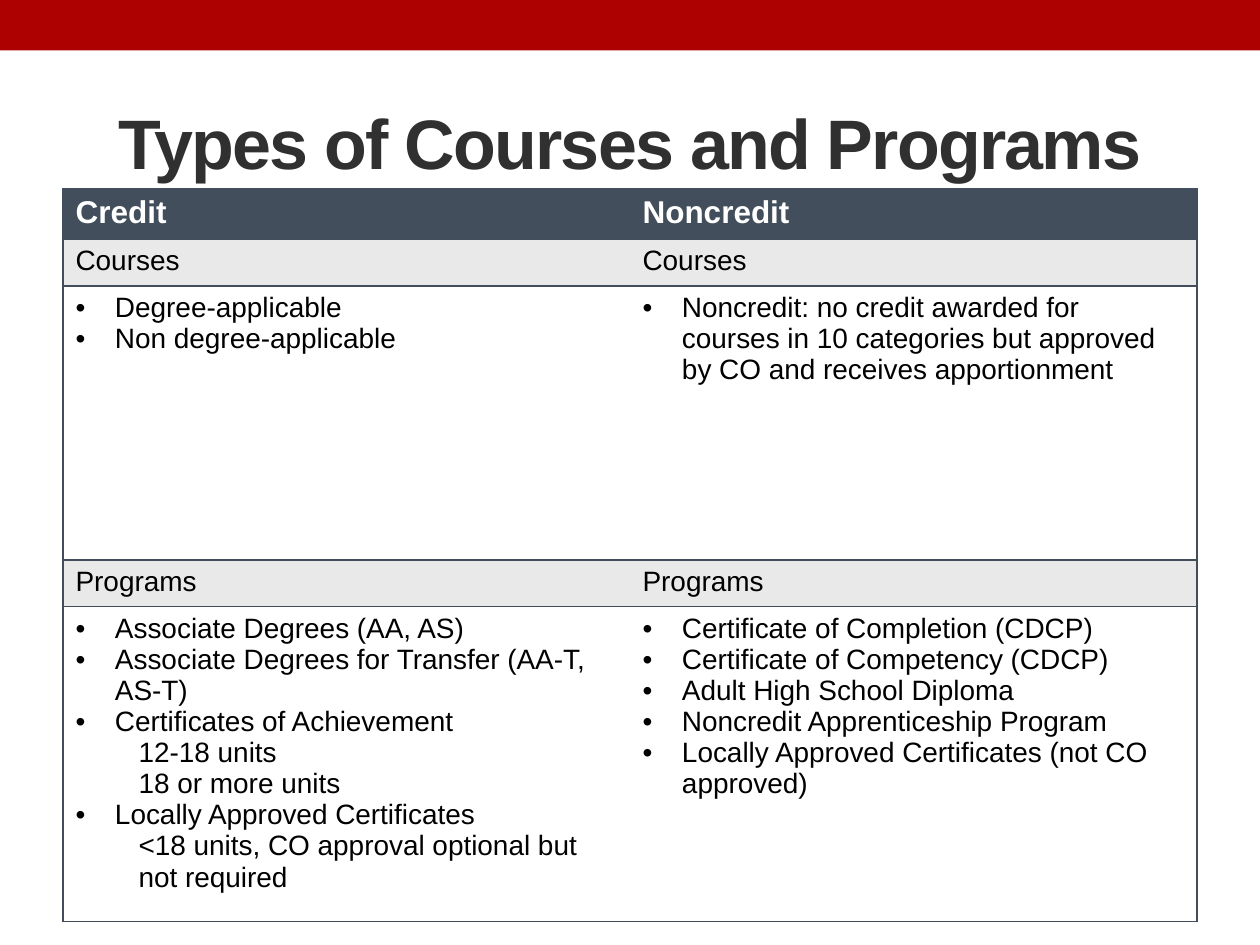
from lxml import etree
from pptx import Presentation
from pptx.dml.color import RGBColor
from pptx.enum.shapes import MSO_SHAPE
from pptx.enum.text import MSO_ANCHOR, PP_ALIGN
from pptx.oxml.ns import qn
from pptx.util import Pt

RECTANGLE = MSO_SHAPE.RECTANGLE
MIDDLE = MSO_ANCHOR.MIDDLE
CENTER = PP_ALIGN.CENTER
TITLE_ONLY = 5

COLORS = {"bar": "AD0101", "title": "303030", "slate": "424E5B",
          "band": "E9E9EA", "white": "FFFFFF", "black": "000000"}

FORMATS = {
    "title": {"size": Pt(40), "bold": True, "name": "Arial"},
    "header": {"size": Pt(18), "bold": True, "name": "Arial"},
    "body": {"size": Pt(16), "bold": False, "name": "Arial"},
}

# Row kind: fill colour, text colour, font format, bulleted
ROW_STYLES = {
    "header": ("slate", "white", "header", False),
    "section": ("band", "black", "body", False),
    "list": ("white", "black", "body", True),
}

# Row kind, height in points, (level, text) entries for each column
ROWS = [
    ("header", 28.8, [[(0, "Credit")], [(0, "Noncredit")]]),
    ("section", 26.6, [[(0, "Courses")], [(0, "Courses")]]),
    ("list", 156.7, [
        [(0, "Degree-applicable"), (0, "Non degree-applicable")],
        [(0, "Noncredit: no credit awarded for courses in 10 categories "
             "but approved by CO and receives apportionment")],
    ]),
    ("section", 26.6, [[(0, "Programs")], [(0, "Programs")]]),
    ("list", 180, [
        [(0, "Associate Degrees (AA, AS)"),
         (0, "Associate Degrees for Transfer (AA-T, AS-T)"),
         (0, "Certificates of Achievement"),
         (1, "12-18 units"),
         (1, "18 or more units"),
         (0, "Locally Approved Certificates"),
         (1, "<18 units, CO approval optional but not required")],
        [(0, "Certificate of Completion (CDCP)"),
         (0, "Certificate of Competency (CDCP)"),
         (0, "Adult High School Diploma"),
         (0, "Noncredit Apprenticeship Program"),
         (0, "Locally Approved Certificates (not CO approved)")],
    ]),
]


def rgb(name):
    return RGBColor.from_string(COLORS[name])


def format_font(font, format_name, color):
    for attribute, value in FORMATS[format_name].items():
        setattr(font, attribute, value)
    font.color.rgb = rgb(color)


def indent_paragraph(paragraph, level):
    """Bullet the first level; indent the second level without a bullet."""
    paragraph.level = level
    properties = paragraph._p.get_or_add_pPr()
    left, first = (Pt(36), 0) if level else (Pt(22.5), Pt(-22.5))
    properties.set("marL", str(int(left)))
    properties.set("indent", str(int(first)))
    if level:
        etree.SubElement(properties, qn("a:buNone"))
    else:
        etree.SubElement(properties, qn("a:buFont"), typeface="Arial")
        etree.SubElement(properties, qn("a:buChar"), char="•")


def set_borders(cell, outer_side):
    """Rule the top, bottom and outer side; leave the inner side open."""
    properties = cell._tc.get_or_add_tcPr()
    for side in ("lnL", "lnR", "lnT", "lnB"):
        line = etree.SubElement(properties, qn(f"a:{side}"), w=str(int(Pt(1))))
        if side in (outer_side, "lnT", "lnB"):
            fill = etree.SubElement(line, qn("a:solidFill"))
            etree.SubElement(fill, qn("a:srgbClr"), val=COLORS["slate"])
        else:
            etree.SubElement(line, qn("a:noFill"))


def fill_cell(cell, kind, entries, outer_side):
    fill_color, text_color, format_name, bulleted = ROW_STYLES[kind]
    set_borders(cell, outer_side)
    cell.fill.solid()
    cell.fill.fore_color.rgb = rgb(fill_color)
    frame = cell.text_frame
    for index, (level, text) in enumerate(entries):
        paragraph = frame.add_paragraph() if index else frame.paragraphs[0]
        run = paragraph.add_run()
        run.text = text
        format_font(run.font, format_name, text_color)
        if bulleted:
            indent_paragraph(paragraph, level)


def add_top_bar(slide, box):
    bar = slide.shapes.add_shape(RECTANGLE, *map(Pt, box))
    bar.shadow.inherit = False
    bar.fill.solid()
    bar.fill.fore_color.rgb = rgb("bar")
    bar.line.fill.background()


def place_title(slide, box, text):
    title = slide.shapes.title
    for attribute, value in zip(("left", "top", "width", "height"), box):
        setattr(title, attribute, Pt(value))
    frame = title.text_frame
    frame.vertical_anchor = MIDDLE
    paragraph = frame.paragraphs[0]
    paragraph.alignment = CENTER
    run = paragraph.add_run()
    run.text = text
    format_font(run.font, "title", "title")
    run._r.get_or_add_rPr().set("spc", "-100")


def add_course_table(slide, box):
    table = slide.shapes.add_table(len(ROWS), 2, *map(Pt, box)).table
    for column in table.columns:
        column.width = Pt(box[2] / 2)
    for row_index, (kind, height, columns) in enumerate(ROWS):
        table.rows[row_index].height = Pt(height)
        for column_index, entries in enumerate(columns):
            fill_cell(table.cell(row_index, column_index), kind, entries,
                      ("lnL", "lnR")[column_index])


def main():
    presentation = Presentation()
    presentation.slide_width = Pt(720)
    presentation.slide_height = Pt(540)
    slide = presentation.slides.add_slide(
        presentation.slide_layouts[TITLE_ONLY])

    add_top_bar(slide, (0, 0, 720, 28.8))
    place_title(slide, (36, 41.8, 648, 77.8), "Types of Courses and Programs")
    add_course_table(slide, (36, 108, 648, sum(row[1] for row in ROWS)))

    presentation.save("out.pptx")


if __name__ == "__main__":
    main()
